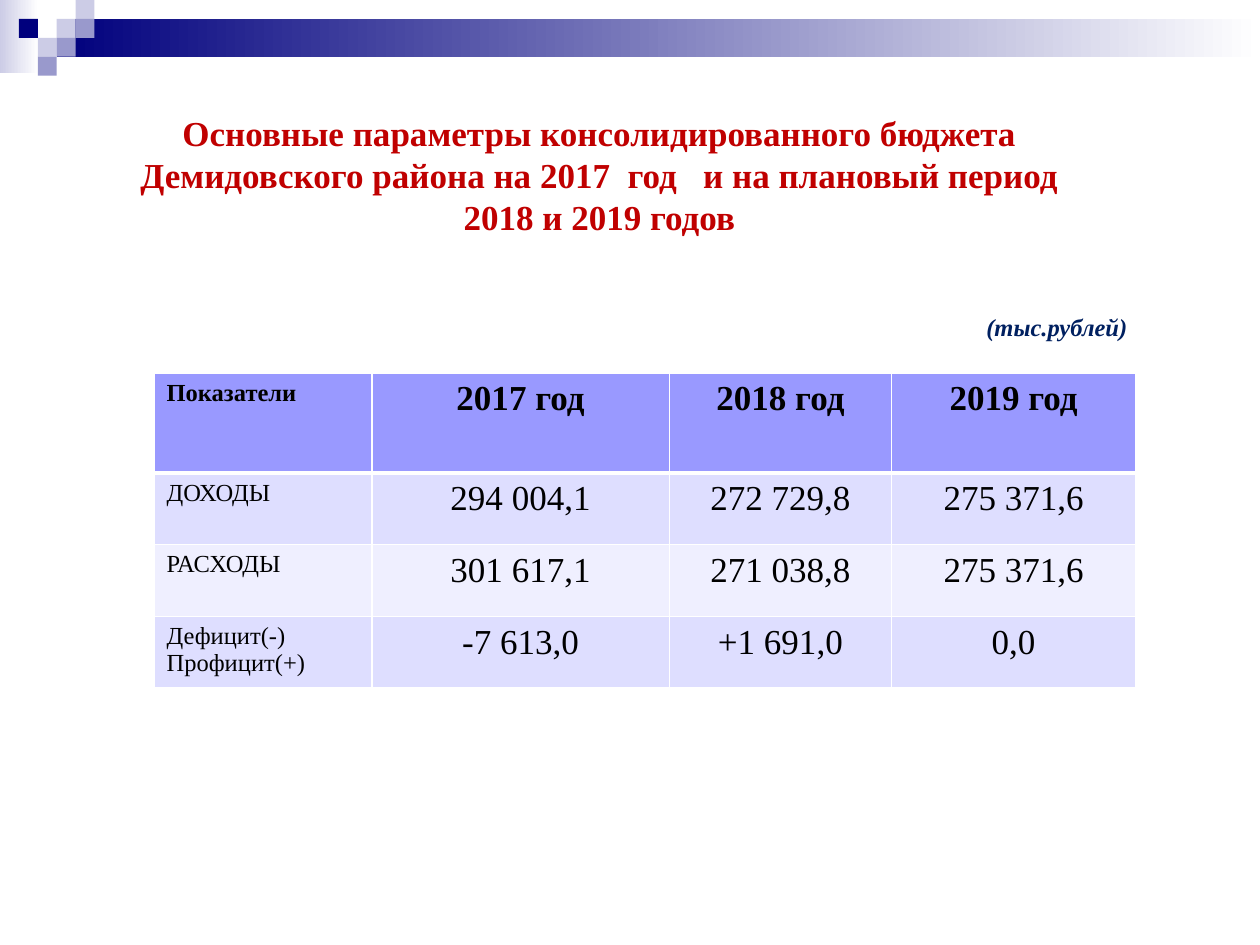
import pptx
import pptx.dml.color
import pptx.enum.shapes
import pptx.enum.text
import pptx.oxml
import pptx.oxml.ns
import pptx.util

Pt = pptx.util.Pt
RGBColor = pptx.dml.color.RGBColor
ALIGN = pptx.enum.text.PP_ALIGN
ANCHOR = pptx.enum.text.MSO_ANCHOR
AUTO_SIZE = pptx.enum.text.MSO_AUTO_SIZE

WHITE = RGBColor(0xFF, 0xFF, 0xFF)
BLACK = RGBColor(0, 0, 0)
NAVY = RGBColor(0, 0, 0x7D)
LILAC = RGBColor(0xCC, 0xCC, 0xE6)
VIOLET = RGBColor(0x99, 0x99, 0xCC)
RED = RGBColor(0xC0, 0, 0)
UNIT_BLUE = RGBColor(0, 0x20, 0x60)
HEADER = RGBColor(0x99, 0x99, 0xFF)
ODD_ROW = RGBColor(0xDE, 0xDE, 0xFF)
EVEN_ROW = RGBColor(0xEF, 0xEF, 0xFF)

STEP = 10.8
MOSAIC = [(3, 1, LILAC), (4, 0, LILAC), (4, 1, VIOLET), (2, 2, LILAC),
          (1, 1, NAVY), (3, 2, VIOLET), (2, 3, VIOLET)]
BUDGET = [
    ("Показатели", "2017 год", "2018 год", "2019 год"),
    ("ДОХОДЫ", "294 004,1", "272 729,8", "275 371,6"),
    ("РАСХОДЫ", "301 617,1", "271 038,8", "275 371,6"),
    ("Дефицит(-)\nПрофицит(+)", "-7 613,0", "+1 691,0", "0,0"),
]


class BudgetSlide:
    font_name = "Times New Roman"

    def __init__(self, slide):
        self.slide = slide

    def apply(self, target, values):
        for attribute, value in values.items():
            setattr(target, attribute, value)

    def fill_text(self, frame, text, size, color, align=ALIGN.LEFT, bold=False, italic=False):
        frame.text = text
        for paragraph in frame.paragraphs:
            paragraph.alignment = align
            for run in paragraph.runs:
                self.apply(run.font, {"name": self.font_name, "size": Pt(size),
                                      "bold": bold, "italic": italic})
                run.font.color.rgb = color

    def block(self, left, top, width, height, *colors):
        rectangle = self.slide.shapes.add_shape(
            pptx.enum.shapes.MSO_SHAPE.RECTANGLE, Pt(left), Pt(top), Pt(width), Pt(height))
        rectangle.shadow.inherit = False
        rectangle.line.fill.background()
        if len(colors) == 1:
            rectangle.fill.solid()
            rectangle.fill.fore_color.rgb = colors[0]
            return
        rectangle.fill.gradient()
        rectangle.fill.gradient_angle = 0
        for stop, color in zip(rectangle.fill.gradient_stops, colors):
            stop.color.rgb = color

    def title(self, text, left, top, width, height):
        heading = self.slide.shapes.title
        self.apply(heading, {"left": Pt(left), "top": Pt(top),
                             "width": Pt(width), "height": Pt(height)})
        self.apply(heading.text_frame, {
            "margin_left": 0, "margin_top": Pt(3.6), "margin_right": 0, "margin_bottom": 0,
            "vertical_anchor": ANCHOR.BOTTOM, "word_wrap": True, "auto_size": AUTO_SIZE.NONE})
        self.fill_text(heading.text_frame, text, 20, RED, ALIGN.CENTER, bold=True)

    def unit_note(self, text, left, top, width, height):
        note = self.slide.shapes.add_textbox(Pt(left), Pt(top), Pt(width), Pt(height))
        self.apply(note.text_frame, {"word_wrap": False,
                                     "auto_size": AUTO_SIZE.SHAPE_TO_FIT_TEXT})
        self.fill_text(note.text_frame, text, 14, UNIT_BLUE, bold=True, italic=True)

    def borders(self, cell, widths):
        properties = cell._tc.get_or_add_tcPr()
        for index, (side, width) in enumerate(widths.items()):
            properties.insert(index, pptx.oxml.parse_xml(
                f'<a:ln{side} {pptx.oxml.ns.nsdecls("a")} w="{Pt(width)}"><a:solidFill>'
                f'<a:srgbClr val="{WHITE}"/></a:solidFill></a:ln{side}>'))

    def table(self, rows, left, top, widths, heights):
        budget = self.slide.shapes.add_table(
            len(rows), len(widths), Pt(left), Pt(top), Pt(sum(widths)), Pt(sum(heights))).table
        for column, width in zip(budget.columns, widths):
            column.width = Pt(width)
        for row, height in zip(budget.rows, heights):
            row.height = Pt(height)
        for r, values in enumerate(rows):
            shade = HEADER if r == 0 else ODD_ROW if r % 2 else EVEN_ROW
            for c, value in enumerate(values):
                cell = budget.cell(r, c)
                cell.fill.solid()
                cell.fill.fore_color.rgb = shade
                self.fill_text(cell.text_frame, value, 20 if c else 14, BLACK,
                               ALIGN.CENTER if c else ALIGN.LEFT, bold=r == 0)
                self.borders(cell, {"L": 1, "R": 1, "T": 3 if r == 1 else 1,
                                    "B": 3 if r == 0 else 1})


def main():
    presentation = pptx.Presentation()
    presentation.slide_width, presentation.slide_height = Pt(720), Pt(540)
    page = BudgetSlide(presentation.slides.add_slide(presentation.slide_layouts[5]))
    page.block(0, 0, 22, 42, LILAC, WHITE)
    page.block(3 * STEP, STEP, 720 - 3 * STEP, 2 * STEP, NAVY, WHITE)
    for column, row, color in MOSAIC:
        page.block(column * STEP, row * STEP, STEP, STEP, color)
    page.title("Основные параметры консолидированного бюджета\n"
               "Демидовского района на 2017  год   и на плановый период 2018 и 2019 годов",
               67.5, 39.5, 550, 96)
    page.table(BUDGET, 88, 213.3, [124.5, 170, 127, 139.5], [57, 41, 41, 41])
    page.unit_note("(тыс.рублей)", 556.5, 174.5, 96, 24.5)
    presentation.save("out.pptx")


if __name__ == "__main__":
    main()
